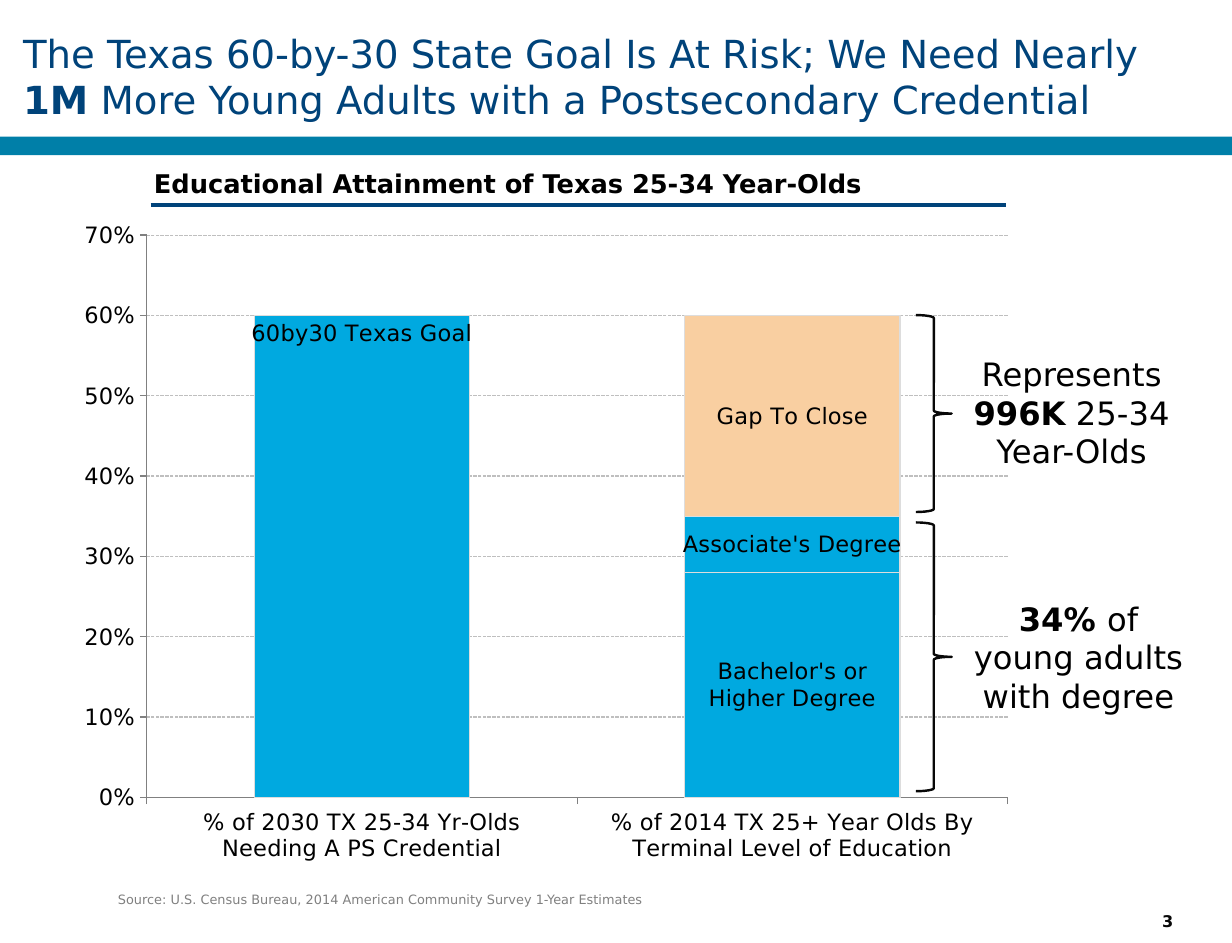
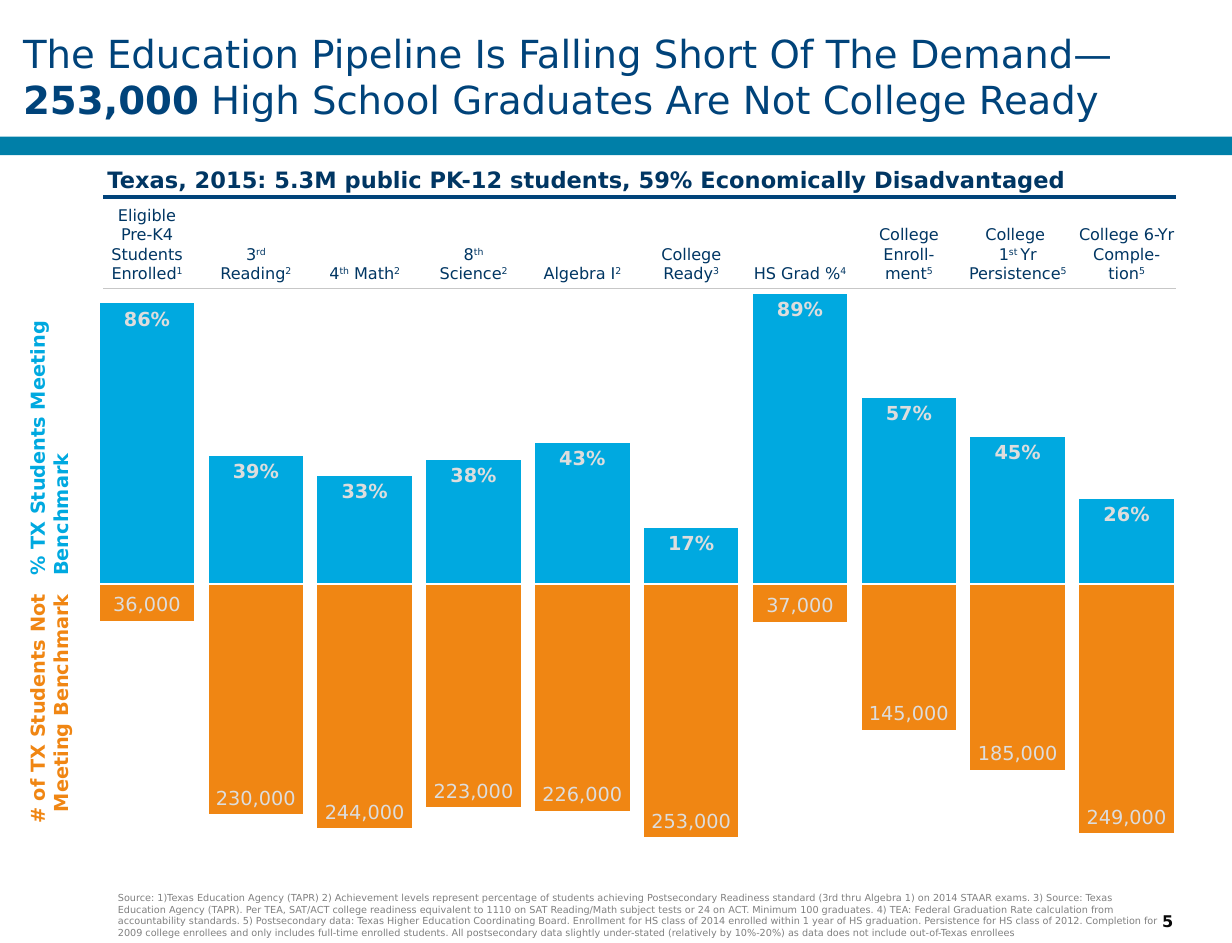
import pptx
import pptx.chart.data
import pptx.dml.color
import pptx.enum.chart
import pptx.enum.dml
import pptx.enum.shapes
import pptx.enum.text
import pptx.oxml
import pptx.oxml.ns
import pptx.util
from lxml import etree

Inches = pptx.util.Inches
Pt = pptx.util.Pt
Align = pptx.enum.text.PP_ALIGN
Anchor = pptx.enum.text.MSO_ANCHOR
Kind = pptx.enum.chart.XL_CHART_TYPE
Place = pptx.enum.chart.XL_LABEL_POSITION
Tick = pptx.enum.chart.XL_TICK_MARK
Shape = pptx.enum.shapes.MSO_SHAPE
qn = pptx.oxml.ns.qn


class Theme:
    font = "DejaVu Sans"
    navy, ink, teal = "00437A", "003663", "007FA8"
    blue, orange, peach = "00A9E0", "F08613", "F9CFA1"
    black, dark, gray = "000000", "080808", "808080"
    rule, grid, pale = "C7C7C7", "BFBFBF", "DDDDDD"
    title, call, head, sub, axis, label, small, note, fine = 24, 20, 16, 14, 14, 12, 10, 8, 6


def color(code):
    return pptx.dml.color.RGBColor.from_string(code)


def paint(fill, code):
    fill.solid()
    fill.fore_color.rgb = color(code)


def style(font, size, code, bold=False):
    font.name, font.size, font.bold = Theme.font, Pt(size), bold
    font.color.rgb = color(code)


class Deck:
    def __init__(self, wide, high):
        self.prs = pptx.Presentation()
        self.prs.slide_width, self.prs.slide_height = Inches(wide), Inches(high)
        self.wide = wide
        self.slide = None

    def page(self, number, title, source, size):
        """Start a slide with its band, title, source and number."""
        self.slide = self.prs.slides.add_slide(self.prs.slide_layouts[6])
        band = self.shape(Shape.RECTANGLE, (0, 1.18, self.wide, 0.16))
        paint(band.fill, Theme.teal)
        band.line.fill.background()
        self.text((0.2, 0.16, 10.28, 0.99), [title], Theme.title, Theme.navy,
                  anchor=Anchor.MIDDLE, inset=(0, 0, 0.08, 0))
        self.text((0.92, 7.65, 9.2, 0.49), [[source]], size, Theme.gray)
        self.text((9.91, 7.9, 0.35, 0.1), [[(number, "b")]], Theme.small, Theme.dark,
                  align=Align.CENTER, anchor=Anchor.MIDDLE, inset=(0, 0, 0, 0), wrap=False)

    def text(self, box, paras, size, code, align=Align.LEFT, anchor=Anchor.TOP,
             inset=(0.1, 0.05, 0.1, 0.05), turn=0, wrap=True):
        """Add a text box; a run is a string or (string, flag), b bold, ^ raised."""
        item = self.slide.shapes.add_textbox(*map(Inches, box))
        item.rotation = turn
        frame = item.text_frame
        frame.word_wrap, frame.vertical_anchor = wrap, anchor
        (frame.margin_left, frame.margin_top,
         frame.margin_right, frame.margin_bottom) = map(Inches, inset)
        for i, runs in enumerate(paras):
            para = frame.add_paragraph() if i else frame.paragraphs[0]
            para.alignment = align
            for part in runs:
                words, flag = (part, "") if isinstance(part, str) else part
                run = para.add_run()
                run.text = words
                style(run.font, size, code, flag == "b")
                if flag == "^":
                    run.font._element.set("baseline", "30000")

    def shape(self, kind, box):
        item = self.slide.shapes.add_shape(kind, *map(Inches, box))
        item.shadow.inherit = False
        return item

    def brace(self, top, high):
        item = self.shape(Shape.RIGHT_BRACE, (7.91, top, 0.31, high))
        item.fill.background()
        item.line.color.rgb = color(Theme.dark)
        item.line.width = Pt(1.5)

    def rule(self, left, right, top, code, width):
        line = self.slide.shapes.add_connector(
            pptx.enum.shapes.MSO_CONNECTOR.STRAIGHT,
            Inches(left), Inches(top), Inches(right), Inches(top))
        line.line.color.rgb = color(code)
        line.line.width = Pt(width)
        etree.SubElement(line._element.spPr, qn("a:effectLst"))

    def chart(self, kind, box, cats, series, gap, area):
        """Add a column chart; area is the inner plot as shares of the frame."""
        data = pptx.chart.data.CategoryChartData()
        data.categories = cats
        for name, vals, code in series:
            data.add_series(name, vals)
        chart = self.slide.shapes.add_chart(kind, *map(Inches, box), data).chart
        chart.has_legend = chart.has_title = False
        style(chart.font, Theme.axis, Theme.black)
        plot = chart.plots[0]
        plot.gap_width, plot.overlap, plot.vary_by_categories = gap, 100, False
        for bars, (name, vals, code) in zip(plot.series, series):
            paint(bars.format.fill, code)
            bars.invert_if_negative = False
        self.fit(chart, area)
        return chart

    def fit(self, chart, area):
        zone = chart._chartSpace.find(".//" + qn("c:plotArea"))
        for old in zone.findall(qn("c:layout")):
            zone.remove(old)
        outer = etree.Element(qn("c:layout"))
        inner = etree.SubElement(outer, qn("c:manualLayout"))
        pairs = [("layoutTarget", "inner"), ("xMode", "edge"), ("yMode", "edge")]
        for tag, val in pairs + list(zip("xywh", area)):
            etree.SubElement(inner, qn("c:" + tag)).set("val", str(val))
        zone.insert(0, outer)

    def stack(self, box, cats, series, area):
        """Stacked columns named inside, each series showing in one category."""
        chart = self.chart(Kind.COLUMN_STACKED, box, cats, series, 100, area)
        axis = chart.value_axis
        axis.minimum_scale, axis.maximum_scale, axis.major_unit = 0, 0.7, 0.1
        axis.tick_labels.number_format = "0%"
        axis.tick_labels.number_format_is_linked = False
        grid = axis.major_gridlines.format.line
        grid.color.rgb, grid.width = color(Theme.grid), Pt(0.75)
        grid.dash_style = pptx.enum.dml.MSO_LINE.SQUARE_DOT
        for side in (axis, chart.category_axis):
            side.major_tick_mark = Tick.OUTSIDE
            side.format.line.color.rgb = color(Theme.gray)
            style(side.tick_labels.font, Theme.axis, Theme.black)
        for i, (bars, (name, vals, code)) in enumerate(zip(chart.plots[0].series, series)):
            bars.format.line.color.rgb = color(Theme.pale)
            bars.format.line.width = Pt(0.75)
            tags = bars.data_labels
            tags.show_series_name, tags.show_value = True, False
            tags.position = Place.CENTER if i else Place.INSIDE_END
            style(tags.font, Theme.axis, Theme.black)
            blank = etree.Element(qn("c:dLbl"))
            etree.SubElement(blank, qn("c:idx")).set("val", str(vals.index(0)))
            etree.SubElement(blank, qn("c:delete")).set("val", "1")
            tags._element.insert(0, blank)

    def bars(self, box, vals, code, low, high, form, bold, area):
        """Plain columns without axes, valued at their inner ends."""
        cats = [str(i + 1) for i in range(len(vals))]
        chart = self.chart(Kind.COLUMN_CLUSTERED, box, cats,
                           [("Series 1", vals, code)], 15, area)
        axis = chart.value_axis
        axis.minimum_scale, axis.maximum_scale = low, high
        axis.has_major_gridlines = False
        axis.visible = chart.category_axis.visible = False
        tags = chart.plots[0].series[0].data_labels
        tags.show_value, tags.position = True, Place.INSIDE_END
        tags.number_format, tags.number_format_is_linked = form, False
        style(tags.font, Theme.label, Theme.pale, bold)


def goal(deck):
    deck.page("3", ["The Texas 60-by-30 State Goal Is At Risk; We Need Nearly ", ("1M", "b"),
                    " More Young Adults with a Postsecondary Credential"],
              "Source: U.S. Census Bureau, 2014 American Community Survey 1-Year Estimates",
              Theme.note)
    deck.stack((0.56, 1.8, 8.31, 5.75),
               ["% of 2030 TX 25-34 Yr-Olds Needing A PS Credential",
                "% of 2014 TX 25+ Year Olds By Terminal Level of Education"],
               [("60by30 Texas Goal", (0.6, 0), Theme.blue),
                ("Bachelor's or Higher Degree", (0, 0.28), Theme.blue),
                ("Associate's Degree", (0, 0.07), Theme.blue),
                ("Gap To Close", (0, 0.25), Theme.peach)],
               (0.085, 0.04, 0.895, 0.844))
    edge = (0.05,) * 4
    deck.text((1.28, 1.4, 6.99, 0.37),
              [[("Educational Attainment of Texas 25-34 Year-Olds", "b")]],
              Theme.head, Theme.black, inset=edge)
    deck.rule(1.3, 8.69, 1.77, Theme.navy, 2)
    deck.brace(2.72, 1.7)
    deck.brace(4.51, 2.32)
    calls = [(8.27, 3.01, ["Represents", (" 996K", "b"), " 25-34 Year-Olds"]),
             (8.33, 5.12, [("34% ", "b"), "of young adults with degree"])]
    for left, top, runs in calls:
        deck.text((left, top, 1.97, 1.11), [runs], Theme.call, Theme.black,
                  align=Align.CENTER, inset=edge)


def pipeline(deck):
    deck.page("5", ["The Education Pipeline Is Falling Short Of The Demand—", ("253,000", "b"),
                    " High School Graduates Are Not College Ready"],
              "Source: 1)Texas Education Agency (TAPR) 2) Achievement levels represent percentage "
              "of students achieving Postsecondary Readiness standard (3rd thru Algebra 1) on 2014 "
              "STAAR exams. 3) Source: Texas Education Agency (TAPR). Per TEA, SAT/ACT college "
              "readiness equivalent to 1110 on SAT Reading/Math subject tests or 24 on ACT. Minimum "
              "100 graduates. 4) TEA: Federal Graduation Rate calculation from accountability "
              "standards. 5) Postsecondary data: Texas Higher Education Coordinating Board. "
              "Enrollment for HS class of 2014 enrolled within 1 year of HS graduation. Persistence "
              "for HS class of 2012. Completion for 2009 college enrollees and only includes "
              "full-time enrolled students. All postsecondary data slightly under-stated (relatively "
              "by 10%-20%) as data does not include out-of-Texas enrollees", Theme.fine)
    left, step = 0.8, 0.94
    heads = [(0.95, [["Eligible"], ["Pre-K4 Students Enrolled", ("1", "^")]]),
             (0.88, [["3", ("rd", "^"), " Reading", ("2", "^")]]),
             (1.08, [["4", ("th", "^"), " Math", ("2", "^")]]),
             (0.88, [["8", ("th", "^"), " Science", ("2", "^")]]),
             (1.08, [["Algebra I", ("2", "^")]]),
             (1.08, [["College Ready", ("3", "^")]]),
             (1.08, [["HS Grad %", ("4", "^")]]),
             (0.78, [["College Enroll-ment", ("5", "^")]]),
             (1.1, [["College "], ["1", ("st ", "^"), "Yr Persistence", ("5", "^")]]),
             (1.05, [["College 6-Yr Comple-tion", ("5", "^")]])]
    wide = step * len(heads)
    deck.bars((left, 1.57, wide, 3.73),
              (0.86, 0.39, 0.33, 0.38, 0.43, 0.17, 0.89, 0.57, 0.45, 0.26),
              Theme.blue, 0, 1, "0%", True, (0, 0.176, 1, 0.753))
    lost = (36, 230, 244, 223, 226, 253, 37, 145, 185, 249)
    deck.bars((left, 4.81, wide, 3.04), [-1000 * n for n in lost],
              Theme.orange, -300000, 0, "#,##0;#,##0", False, (0, 0.08, 1, 0.849))
    for i, (span, paras) in enumerate(heads):
        mid = left + step * (i + 0.5)
        deck.text((mid - span / 2, 1.71, span, 0.78), paras, Theme.small, Theme.ink,
                  align=Align.CENTER, anchor=Anchor.BOTTOM)
    deck.text((0.83, 1.38, 9.4, 0.34),
              [[("Texas, 2015: 5.3M public PK-12 students, 59% Economically Disadvantaged", "b")]],
              Theme.sub, Theme.ink)
    deck.rule(0.89, 10.16, 1.7, Theme.navy, 2)
    deck.rule(0.89, 10.16, 2.49, Theme.rule, 0.75)
    sides = [(3.38, "% TX Students Meeting Benchmark", Theme.blue, Align.LEFT),
             (6.22, "# of TX Students Not Meeting Benchmark", Theme.orange, Align.RIGHT)]
    for top, words, code, align in sides:
        deck.text((-0.92, top, 2.68, 0.5), [[(words, "b")]], Theme.label, code, align=align,
                  anchor=Anchor.BOTTOM, inset=(0, 0.05, 0, 0.05), turn=270)


def main():
    deck = Deck(10.64, 8.14)
    goal(deck)
    pipeline(deck)
    deck.prs.save("out.pptx")


if __name__ == "__main__":
    main()
